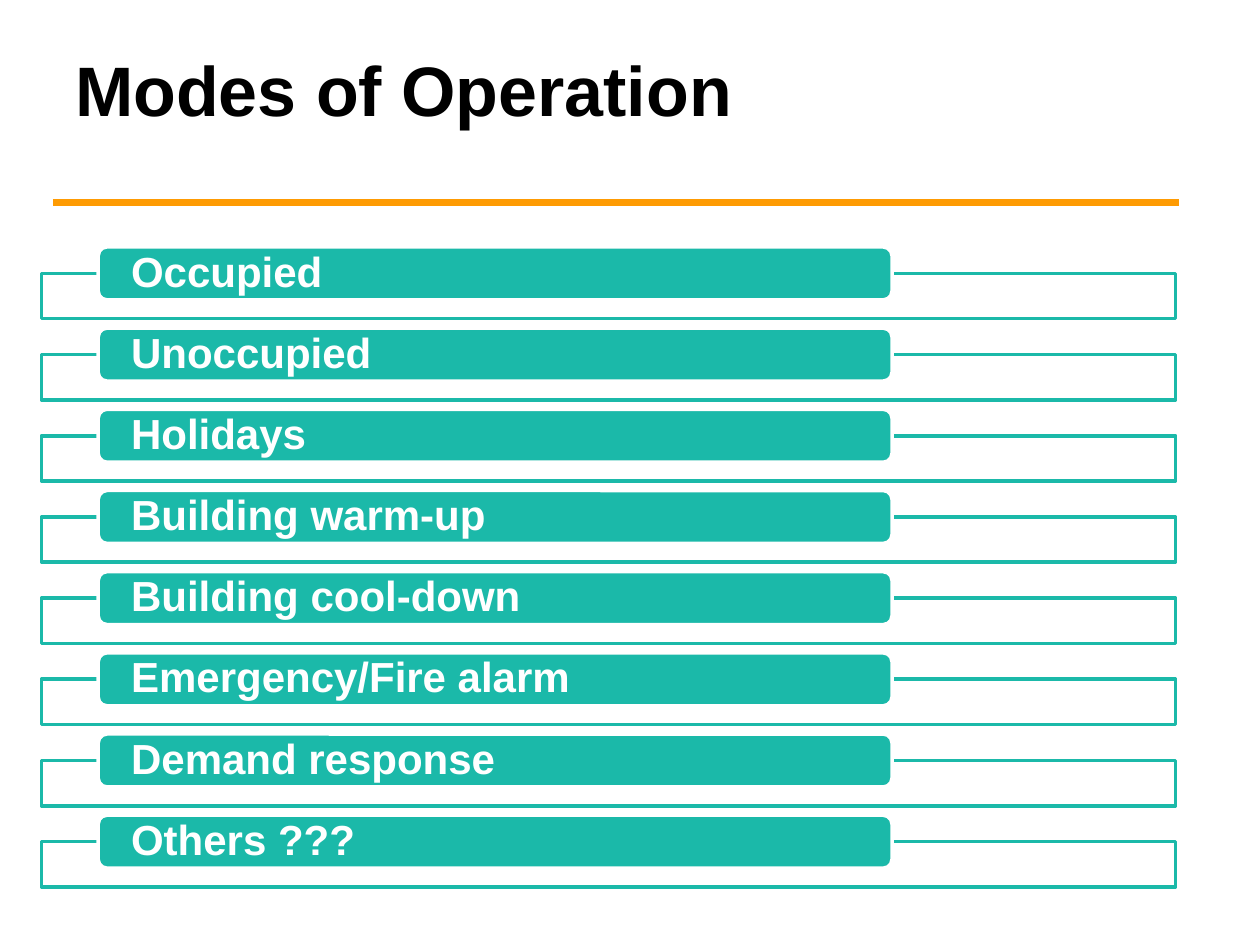
from lxml.etree import SubElement
from pptx import Presentation
from pptx.dml.color import RGBColor
from pptx.enum.shapes import MSO_CONNECTOR, MSO_SHAPE
from pptx.enum.text import MSO_ANCHOR, PP_ALIGN
from pptx.oxml.ns import qn
from pptx.util import Inches, Pt

TEAL, ORANGE, WHITE, BLACK = "1BB9A9", "FE9B03", "FFFFFF", "000000"
MODES = [
    "Occupied", "Unoccupied", "Holidays", "Building warm-up",
    "Building cool-down", "Emergency/Fire alarm", "Demand response", "Others ???",
]
FIRST_TOP, LAST_TOP = 1.96, 6.47
FRAME_OFFSET = 0.21


def rgb(value):
    return RGBColor.from_string(value)


def set_attrs(obj, values):
    for name, value in values.items():
        setattr(obj, name, value)


def write_text(sp, text, size, color, frame_format, paragraph_format):
    tf = sp.text_frame
    set_attrs(tf, {"word_wrap": True, "vertical_anchor": MSO_ANCHOR.MIDDLE, **frame_format})
    p = tf.paragraphs[0]
    set_attrs(p, {"alignment": PP_ALIGN.LEFT, **paragraph_format})
    r = p.add_run()
    r.text = text
    set_attrs(r.font, {"name": "Arial", "size": Pt(size), "bold": True})
    r.font.color.rgb = rgb(color)


def add_title(s, text):
    sp = s.shapes.add_textbox(Inches(0.5), Inches(0.25), Inches(6.83), Inches(0.9))
    write_text(sp, text, 40, BLACK, {}, {})


def add_rule(s):
    y = Inches(1.61)
    sp = s.shapes.add_connector(MSO_CONNECTOR.STRAIGHT, Inches(0.42), y, Inches(9.36), y)
    sp.line.color.rgb = rgb(ORANGE)
    sp.line.width = Pt(4)
    SubElement(sp._element.spPr, qn("a:effectLst"))


def add_box(shapes, kind, box, fill, line):
    sp = shapes.add_shape(kind, *map(Inches, box))
    sp.shadow.inherit = False
    sp.fill.solid()
    sp.fill.fore_color.rgb = rgb(fill)
    sp.line.color.rgb = rgb(line)
    sp.line.width = Pt(2)
    return sp


def add_mode(shapes, text, top):
    frame_box = (0.33, top + FRAME_OFFSET, 9, 0.36)
    frame = add_box(shapes, MSO_SHAPE.RECTANGLE, frame_box, WHITE, TEAL)
    color = frame._element.spPr.find(qn("a:solidFill"))[0]
    SubElement(color, qn("a:alpha"), val="90000")

    label_box = (0.78, top, 6.3, 0.42)
    label = add_box(shapes, MSO_SHAPE.ROUNDED_RECTANGLE, label_box, TEAL, WHITE)
    inset = Inches(0.24)
    margins = {"margin_left": inset, "margin_right": inset, "margin_top": 0, "margin_bottom": 0}
    write_text(label, text, 24, WHITE, margins, {"line_spacing": 0.9})


def add_modes(s):
    group = s.shapes.add_group_shape()
    pitch = (LAST_TOP - FIRST_TOP) / (len(MODES) - 1)
    for i, text in enumerate(MODES):
        add_mode(group.shapes, text, FIRST_TOP + i * pitch)


def main():
    prs = Presentation()
    set_attrs(prs, {"slide_width": Inches(10), "slide_height": Inches(7.5)})
    s = prs.slides.add_slide(prs.slide_layouts[6])
    add_rule(s)
    add_title(s, "Modes of Operation")
    add_modes(s)
    prs.save("out.pptx")


if __name__ == "__main__":
    main()
